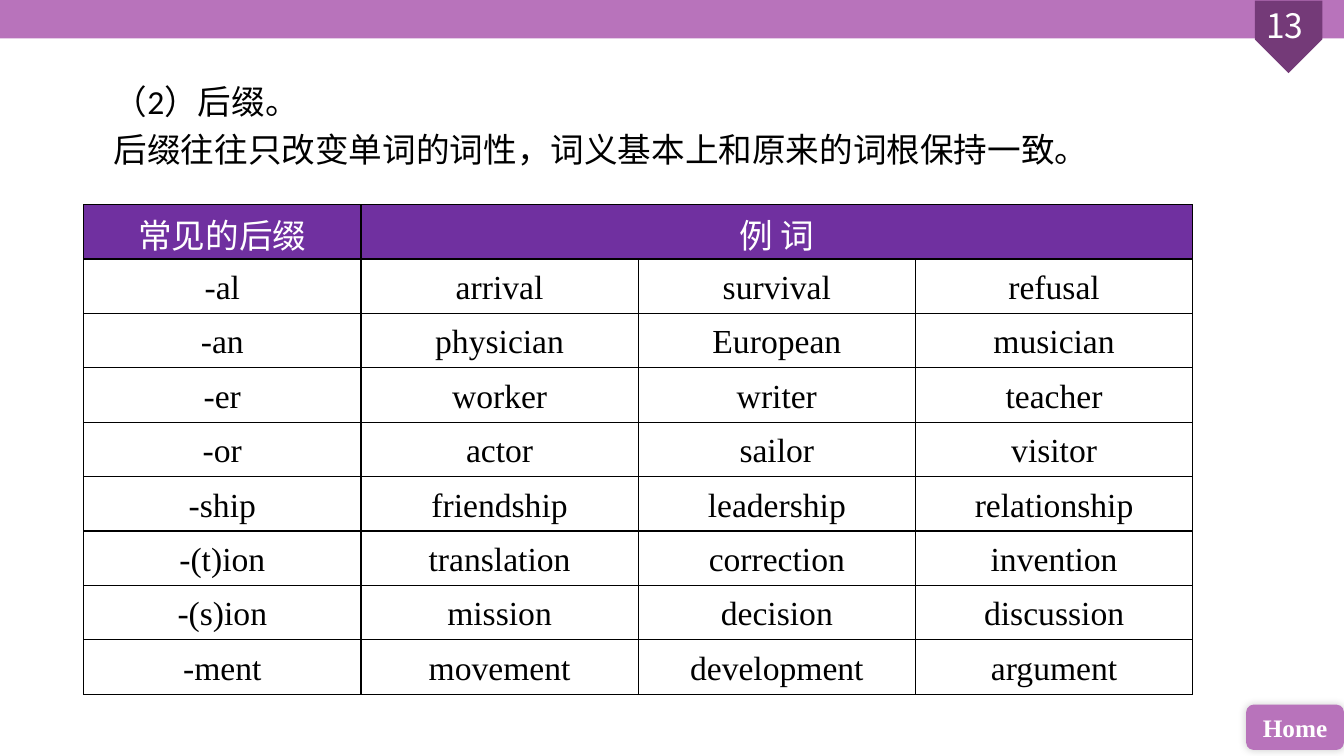
from lxml import etree
from pptx import Presentation
from pptx.dml.color import RGBColor
from pptx.enum.shapes import MSO_SHAPE
from pptx.enum.text import MSO_ANCHOR, PP_ALIGN
from pptx.oxml import parse_xml
from pptx.oxml.ns import nsdecls, qn
from pptx.util import Inches, Pt

RECT, TAG, ROUNDED = MSO_SHAPE.RECTANGLE, MSO_SHAPE.PENTAGON, MSO_SHAPE.ROUNDED_RECTANGLE
LEFT, CENTER = PP_ALIGN.LEFT, PP_ALIGN.CENTER
MIDDLE = MSO_ANCHOR.MIDDLE

COLORS = {
    "black": "000000",
    "white": "FFFFFF",
    "orchid": "B873BB",
    "plum": "743A78",
    "header": "7030A0",
}
CJK, SERIF, SANS = "Noto Sans CJK SC", "Times New Roman", "Calibri"

HEADINGS = ["常见的后缀", "例 词"]
SUFFIXES = [
    ["-al", "arrival", "survival", "refusal"],
    ["-an", "physician", "European", "musician"],
    ["-er", "worker", "writer", "teacher"],
    ["-or", "actor", "sailor", "visitor"],
    ["-ship", "friendship", "leadership", "relationship"],
    ["-(t)ion", "translation", "correction", "invention"],
    ["-(s)ion", "mission", "decision", "discussion"],
    ["-ment", "movement", "development", "argument"],
]


def color(name):
    return RGBColor.from_string(COLORS[name])


class SlideBuilder:
    def __init__(self, slide):
        self.slide = slide

    def fill_text(self, frame, text, font, size=24, ink="black", bold=False,
                  align=CENTER, spacing=1.0, indent=0):
        frame.text = text
        for para in frame.paragraphs:
            para.alignment = align
            para.line_spacing = spacing
            if indent:
                para._p.get_or_add_pPr().set("indent", str(Inches(indent)))
            for span in para.runs:
                span.font.name = font
                span.font.size = Pt(size)
                span.font.bold = bold
                span.font.color.rgb = color(ink)
                east_asian = etree.SubElement(span.font._element, qn("a:ea"))
                east_asian.set("typeface", CJK)

    def shape(self, kind, left, top, width, height, fill, rotation=0):
        box = self.slide.shapes.add_shape(
            kind, Inches(left), Inches(top), Inches(width), Inches(height))
        box.shadow.inherit = False
        box.fill.solid()
        box.fill.fore_color.rgb = color(fill)
        box.line.fill.background()
        box.rotation = rotation
        return box

    def button(self, text, left, top, width, height):
        box = self.shape(ROUNDED, left, top, width, height, "orchid")
        box.text_frame.vertical_anchor = MIDDLE
        box.text_frame.margin_left = box.text_frame.margin_right = 0
        self.fill_text(box.text_frame, text, SERIF, 18, "white", bold=True)
        effects = box._element.spPr.find(qn("a:effectLst"))
        effects.append(parse_xml(
            f'<a:outerShdw {nsdecls("a")} blurRad="{Pt(6)}" dist="0" dir="18900000">'
            f'<a:srgbClr val="{COLORS["black"]}"><a:alpha val="20000"/></a:srgbClr>'
            '</a:outerShdw>'))

    def text(self, text, left, top, width, height, font, **style):
        box = self.slide.shapes.add_textbox(
            Inches(left), Inches(top), Inches(width), Inches(height))
        box.text_frame.word_wrap = True
        self.fill_text(box.text_frame, text, font, **style)

    def border(self, cell):
        properties = cell._tc.get_or_add_tcPr()
        for position, side in enumerate(("lnL", "lnR", "lnT", "lnB")):
            properties.insert(position, parse_xml(
                f'<a:{side} {nsdecls("a")} w="{Pt(1)}"><a:solidFill>'
                f'<a:srgbClr val="{COLORS["black"]}"/></a:solidFill></a:{side}>'))

    def table(self, headings, rows, left, top, column_width, row_height):
        columns = len(rows[0])
        grid = self.slide.shapes.add_table(
            len(rows) + 1, columns, Inches(left), Inches(top),
            Inches(column_width * columns),
            Inches(row_height * (len(rows) + 1))).table
        grid.first_row = grid.horz_banding = False
        for column in grid.columns:
            column.width = Inches(column_width)
        for row in grid.rows:
            row.height = Inches(row_height)
        grid.cell(0, 1).merge(grid.cell(0, columns - 1))
        padded = headings + [""] * (columns - len(headings))
        for row_index, words in enumerate([padded] + rows):
            is_header = row_index == 0
            for column_index, word in enumerate(words):
                cell = grid.cell(row_index, column_index)
                cell.vertical_anchor = MIDDLE
                cell.margin_top = cell.margin_bottom = 0
                if is_header:
                    cell.fill.solid()
                    cell.fill.fore_color.rgb = color("header")
                else:
                    cell.fill.background()
                self.border(cell)
                if word:
                    self.fill_text(cell.text_frame, word, SERIF, spacing=1.1,
                                   ink="white" if is_header else "black")


def main():
    deck = Presentation()
    deck.slide_width, deck.slide_height = Inches(13.33), Inches(7.5)
    page = SlideBuilder(deck.slides.add_slide(deck.slide_layouts[6]))

    # Top band with page number tag
    page.shape(RECT, 0, 0, 13.33, 0.38, "orchid")
    page.shape(TAG, 12.42, 0.03, 0.72, 0.67, "plum", rotation=90)
    page.text("13 ", 12.29, 0, 0.98, 0.5, CJK, ink="white")

    # Home button
    page.button("Home", 12.36, 6.99, 0.97, 0.45)

    # Introduction
    page.text("（2）后缀。\n后缀往往只改变单词的词性，词义基本上和原来的词根保持一致。",
              0.53, 0.67, 12.47, 1.07, SANS, align=LEFT, spacing=1.2, indent=0.5)

    # Suffix table
    page.table(HEADINGS, SUFFIXES, 0.83, 2.03, 2.75, 0.54)

    deck.save("out.pptx")


if __name__ == "__main__":
    main()
